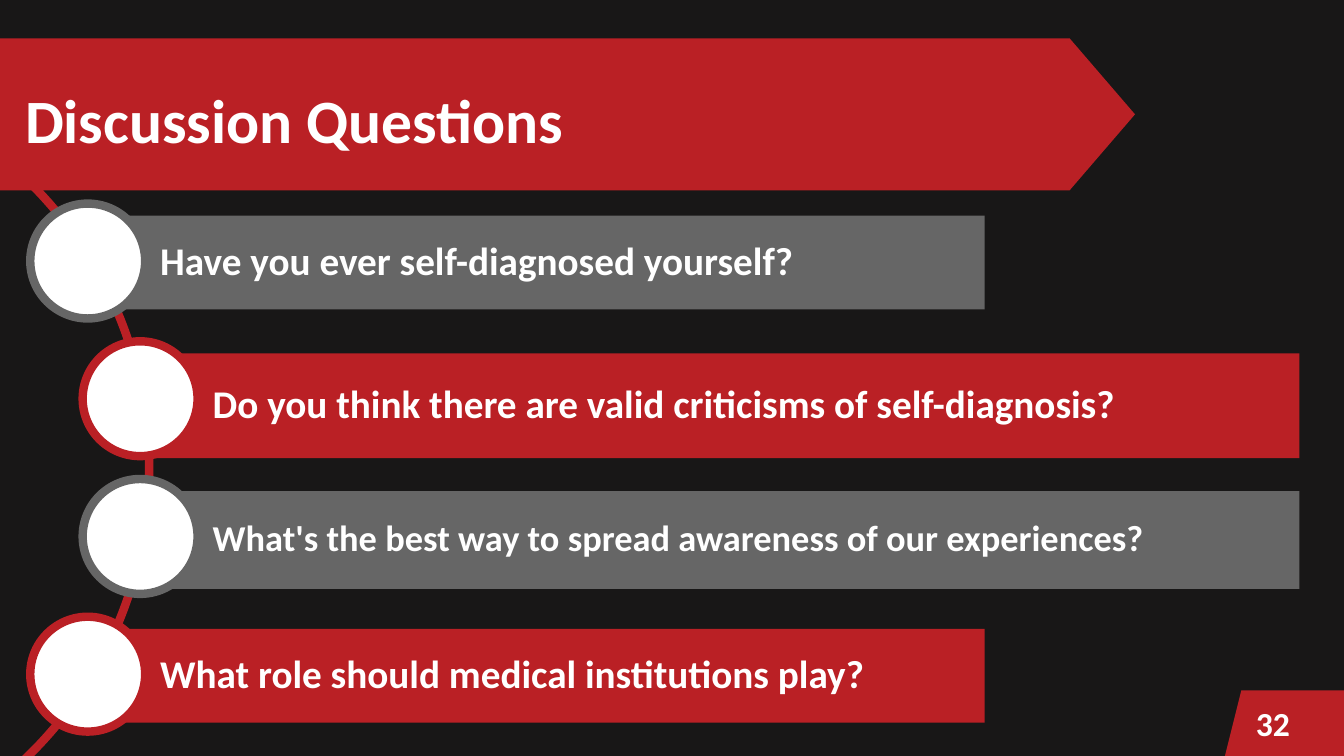
from dataclasses import dataclass

from pptx import Presentation
from pptx.dml.color import RGBColor
from pptx.enum.shapes import MSO_SHAPE
from pptx.enum.text import MSO_ANCHOR, PP_ALIGN
from pptx.util import Inches, Pt


@dataclass(frozen=True)
class Theme:
    background: str = "181717"
    red: str = "BA2025"
    grey: str = "666666"
    white: str = "FFFFFF"
    font: str = "Calibri"
    title_size: int = 44
    question_size: int = 28
    long_question_size: int = 26
    number_size: int = 24
    outline: int = 6


class SlideBuilder:
    """Draws styled elements on one slide, with lengths in square grid cells, 40 across."""

    def __init__(self, presentation, theme):
        self.theme = theme
        self.cell = presentation.slide_width / 40
        self.slide = presentation.slides.add_slide(presentation.slide_layouts[6])
        fill = self.slide.background.fill
        fill.solid()
        fill.fore_color.rgb = RGBColor.from_string(theme.background)

    def box(self, lengths):
        return [round(length * self.cell) for length in lengths]

    def shape(self, kind, lengths, color, outline=None, adjustments=()):
        shape = self.slide.shapes.add_shape(kind, *self.box(lengths))
        shape.shadow.inherit = False
        shape.fill.solid()
        shape.fill.fore_color.rgb = RGBColor.from_string(color)
        if outline:
            shape.line.color.rgb = RGBColor.from_string(outline)
            shape.line.width = Pt(self.theme.outline)
        else:
            shape.line.fill.background()
        for index, value in enumerate(adjustments):
            shape.adjustments[index] = value
        return shape

    def label(self, shape, text, size, anchor=MSO_ANCHOR.MIDDLE, line_spacing=0.9):
        frame = shape.text_frame
        frame.word_wrap = True
        frame.vertical_anchor = anchor
        paragraph = frame.paragraphs[0]
        paragraph.text = text
        paragraph.alignment = PP_ALIGN.LEFT
        paragraph.line_spacing = line_spacing
        paragraph.font.name = self.theme.font
        paragraph.font.size = Pt(size)
        paragraph.font.bold = True
        paragraph.font.color.rgb = RGBColor.from_string(self.theme.white)

    def text(self, lengths, text, size, **style):
        self.label(self.slide.shapes.add_textbox(*self.box(lengths)), text, size, **style)

    def question(self, left, top, width, height, color, text, size):
        bar = self.shape(MSO_SHAPE.RECTANGLE, (left, top, width, height), color)
        self.label(bar, text, size)
        bar.text_frame.margin_left = round(2.16 * self.cell)
        circle = (left - 1.71, top - 0.36, 3.42, 3.42)
        self.shape(MSO_SHAPE.OVAL, circle, self.theme.white, color)


def main():
    theme = Theme()
    presentation = Presentation()
    presentation.slide_width, presentation.slide_height = Inches(13.33), Inches(7.5)
    builder = SlideBuilder(presentation, theme)

    builder.shape(MSO_SHAPE.PENTAGON, (-0.48, 1.14, 34.26, 4.53), theme.red,
                  adjustments=(0.43,))
    builder.shape(MSO_SHAPE.PARALLELOGRAM, (36.36, 20.55, 4.74, 2.34), theme.red)
    builder.text((37.08, 20.79, 2.25, 1.2), "32", theme.number_size,
                 anchor=MSO_ANCHOR.TOP, line_spacing=1.0)
    builder.shape(MSO_SHAPE.BLOCK_ARC, (-19.5, 1.98, 23.94, 23.94), theme.red,
                  theme.red, adjustments=(189, 32.09, 0))
    builder.text((0.45, 1.62, 34.5, 4.11), "Discussion Questions", theme.title_size)

    outer, inner = (2.61, 26.7), (4.17, 34.5)
    questions = [
        (outer, 2.79, "Have you ever self-diagnosed yourself?", theme.question_size),
        (inner, 3.12, "Do you think there are valid criticisms of self-diagnosis?",
         theme.question_size),
        (inner, 2.91, "What's the best way to spread awareness of our experiences?",
         theme.long_question_size),
        (outer, 2.79, "What role should medical institutions play?", theme.question_size),
    ]
    for index, ((left, width), height, text, size) in enumerate(questions):
        color = theme.red if index % 2 else theme.grey
        builder.question(left, 6.42 + 4.1 * index, width, height, color, text, size)

    presentation.save("out.pptx")


if __name__ == "__main__":
    main()
